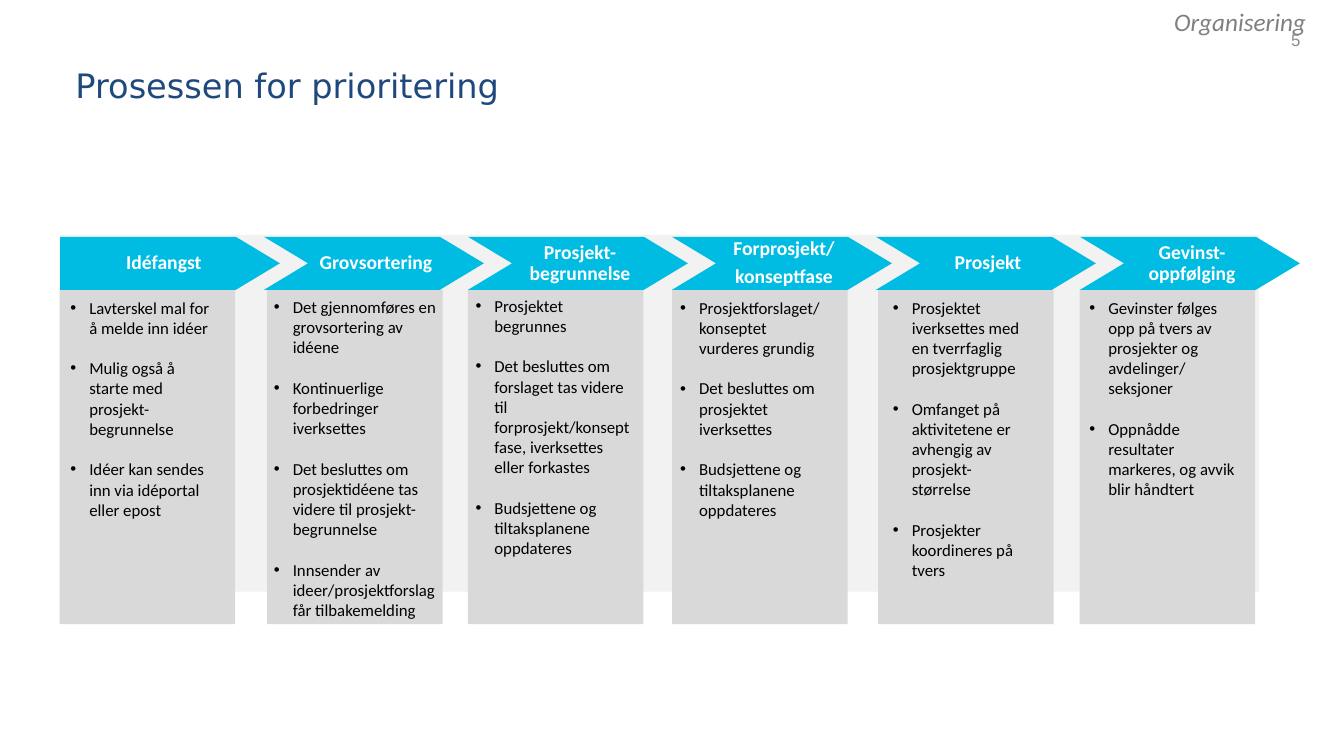
from dataclasses import dataclass

from lxml.etree import SubElement
from pptx import Presentation
from pptx.dml.color import RGBColor
from pptx.enum.shapes import MSO_SHAPE
from pptx.enum.text import MSO_ANCHOR, PP_ALIGN
from pptx.oxml.ns import qn
from pptx.util import Pt


@dataclass(frozen=True)
class Theme:
    """Colours, fonts and type sizes of the slide."""
    body_font: str = "Calibri"
    title_font: str = "DejaVu Sans"
    number_font: str = "Arial"
    title: str = "1F497D"
    section: str = "808080"
    number: str = "8C8C8C"
    text: str = "000000"
    arrow: str = "00BCE2"
    arrow_text: str = "FFFFFF"
    backdrop: str = "F2F2F2"
    panel: str = "D9D9D9"
    title_size: float = 24
    section_size: float = 18
    arrow_size: float = 14
    body_size: float = 12


@dataclass(frozen=True)
class Step:
    """One process step; text_area is left, top and width in points."""
    heading: tuple
    panel_left: float
    text_area: tuple
    bullets: tuple


THEME = Theme()
ARROW_LEFT, ARROW_TOP, ARROW_PITCH = 42.9, 169.2, 145.72
ARROW_WIDTH, ARROW_HEIGHT, ARROW_TIP = 157, 37.8, 31.4
PANEL_TOP, PANEL_WIDTH, PANEL_HEIGHT = 206.9, 125.4, 239

STEPS = (
    Step(("Idéfangst",), 42.6, (43.2, 208.8, 118.1), (
        "Lavterskel mal for å melde inn idéer",
        "Mulig også å starte med prosjekt-begrunnelse",
        "Idéer kan sendes inn via idéportal eller epost")),
    Step(("Grovsortering",), 190.8, (188.6, 208.4, 132.5), (
        "Det gjennomføres en grovsortering av idéene",
        "Kontinuerlige forbedringer iverksettes",
        "Det besluttes om prosjektidéene tas videre til prosjekt-begrunnelse",
        "Innsender av ideer/prosjektforslag får tilbakemelding")),
    Step(("Prosjekt-begrunnelse",), 334.2, (332.6, 207.4, 124.6), (
        "Prosjektet begrunnes",
        "Det besluttes om forslaget tas videre til forprosjekt/konseptfase, "
        "iverksettes eller forkastes",
        "Budsjettene og tiltaksplanene oppdateres")),
    Step(("Forprosjekt/", "konseptfase"), 480.2, (478.8, 208.8, 118.1), (
        "Prosjektforslaget/konseptet vurderes grundig",
        "Det besluttes om prosjektet iverksettes",
        "Budsjettene og tiltaksplanene oppdateres")),
    Step(("Prosjekt",), 627.2, (630.7, 208.8, 111.6), (
        "Prosjektet iverksettes med en tverrfaglig prosjektgruppe",
        "Omfanget på aktivitetene er avhengig av prosjekt-størrelse",
        "Prosjekter koordineres på tvers")),
    Step(("Gevinst-oppfølging",), 771.1, (771.1, 208.8, 122.4), (
        "Gevinster følges opp på tvers av prosjekter og avdelinger/ seksjoner",
        "Oppnådde resultater markeres, og avvik blir håndtert")),
)


def paint(shape, color):
    """Give a shape a plain fill without line or shadow."""
    shape.shadow.inherit = False
    shape.fill.solid()
    shape.fill.fore_color.rgb = RGBColor.from_string(color)
    shape.line.fill.background()


def style(para, font, size, color, bold=False, italic=False):
    """Set the font of a whole paragraph."""
    para.font.name = font
    para.font.size = Pt(size)
    para.font.bold = bold
    para.font.italic = italic
    para.font.color.rgb = RGBColor.from_string(color)


def add_panel(page, left, top, width, height, color):
    """Draw a plain rectangle."""
    panel = page.shapes.add_shape(
        MSO_SHAPE.RECTANGLE, Pt(left), Pt(top), Pt(width), Pt(height))
    paint(panel, color)


def add_box(page, left, top, width, height, anchor=MSO_ANCHOR.TOP):
    """Add a wrapping text box and return its text frame."""
    box = page.shapes.add_textbox(Pt(left), Pt(top), Pt(width), Pt(height))
    frame = box.text_frame
    frame.word_wrap = True
    frame.vertical_anchor = anchor
    return frame


def add_label(page, area, text, font, size, color, italic=False,
              anchor=MSO_ANCHOR.MIDDLE, align=PP_ALIGN.LEFT):
    """Add a single line of text."""
    para = add_box(page, *area, anchor=anchor).paragraphs[0]
    para.text = text
    para.alignment = align
    style(para, font, size, color, italic=italic)


def fill_lines(frame, lines):
    """Write one paragraph per line and return the paragraphs."""
    frame.text = "\n".join(lines)
    return frame.paragraphs


def add_arrow(page, index, lines):
    """Draw a process arrow; every arrow but the first is notched."""
    left = ARROW_LEFT + index * ARROW_PITCH
    right, bottom = left + ARROW_WIDTH, ARROW_TOP + ARROW_HEIGHT
    middle = ARROW_TOP + ARROW_HEIGHT / 2
    points = [(right - ARROW_TIP, ARROW_TOP), (right, middle),
              (right - ARROW_TIP, bottom), (left, bottom)]
    if index:
        points.append((left + ARROW_TIP, middle))
    builder = page.shapes.build_freeform(Pt(left), Pt(ARROW_TOP))
    builder.add_line_segments([(Pt(x), Pt(y)) for x, y in points], close=True)
    arrow = builder.convert_to_shape()
    paint(arrow, THEME.arrow)
    frame = arrow.text_frame
    frame.word_wrap = True
    frame.vertical_anchor = MSO_ANCHOR.MIDDLE
    frame.margin_left, frame.margin_right = (
        (Pt(27.4), Pt(24.5)) if index else (Pt(4.3), Pt(13)))
    frame.margin_top = frame.margin_bottom = Pt(2.2)
    for para in fill_lines(frame, lines):
        para.alignment = PP_ALIGN.CENTER
        para.line_spacing = 0.9
        para.space_after = Pt(4.9)
        style(para, THEME.body_font, THEME.arrow_size, THEME.arrow_text, bold=True)


def add_bullets(page, area, lines):
    """Add a bulleted list with one line of space between its items."""
    frame = add_box(page, *area, PANEL_HEIGHT - 2)
    for index, para in enumerate(fill_lines(frame, lines)):
        if index:
            para.space_before = Pt(14.6)
        properties = para._p.get_or_add_pPr()
        properties.set("marL", str(Pt(13.5)))
        properties.set("indent", str(-Pt(13.5)))
        SubElement(properties, qn("a:buFont"), typeface="Arial")
        SubElement(properties, qn("a:buChar"), char="•")
        style(para, THEME.body_font, THEME.body_size, THEME.text)


def main():
    """Build the slide and save the deck."""
    deck = Presentation()
    deck.slide_width, deck.slide_height = Pt(960), Pt(540)
    page = deck.slides.add_slide(deck.slide_layouts[6])
    add_label(page, (712.1, 14.4, 223.9, 28.8), "5", THEME.number_font,
              THEME.body_size, THEME.number, align=PP_ALIGN.RIGHT)
    add_panel(page, 43.2, 167.8, 856.1, 254.9, THEME.backdrop)
    for step in STEPS:
        add_panel(page, step.panel_left, PANEL_TOP, PANEL_WIDTH, PANEL_HEIGHT,
                  THEME.panel)
    for index, step in enumerate(STEPS):
        add_arrow(page, index, step.heading)
        add_bullets(page, step.text_area, step.bullets)
    add_label(page, (46.8, 33.1, 810, 54.7), "Prosessen for prioritering",
              THEME.title_font, THEME.title_size, THEME.title)
    add_label(page, (831.6, 0.7, 128.2, 28.8), "Organisering", THEME.body_font,
              THEME.section_size, THEME.section, italic=True,
              anchor=MSO_ANCHOR.TOP)
    deck.save("out.pptx")


if __name__ == "__main__":
    main()
